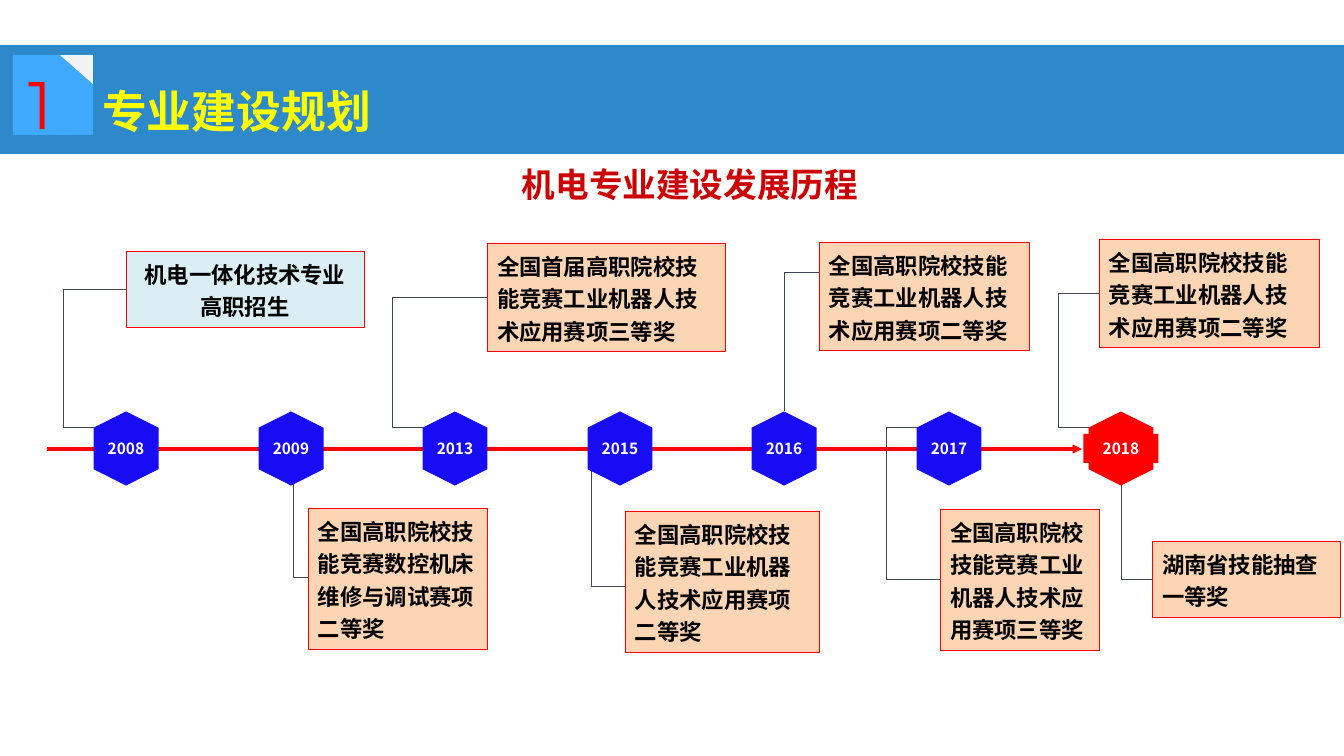
from pptx import Presentation
from pptx import util as u
from pptx.dml import color
from pptx.enum import shapes, text
from pptx.oxml import xmlchemy as x
from lxml import etree

A = "{http://schemas.openxmlformats.org/drawingml/2006/main}"
CJK = "Noto Sans CJK SC"
SHAPE, ALIGN = shapes.MSO_SHAPE, text.PP_ALIGN


def px(n):
    return u.Emu(round(n * 914400 / 100.8))


def rgb(c):
    return color.RGBColor.from_string(c)


prs = Presentation()
prs.slide_width, prs.slide_height = px(1344), px(756)
s = prs.slides.add_slide(prs.slide_layouts[5])

# Header band with its title in front
band = s.shapes.add_shape(SHAPE.RECTANGLE, px(0), px(45), px(1344), px(109))
title = s.shapes.title
title.left, title.top, title.width, title.height = px(94), px(46), px(350), px(95)
title.element.addprevious(band.element)
plain = [(band, "0070C0")]
texts = [(title, "专业建设规划", dict(size=32, color="FFFF00", spacing=1.6, inset=8))]

# Heading
heading = s.shapes.add_textbox(px(513), px(159), px(379), px(64))
texts.append((heading, "机电专业建设发展历程", dict(size=24, color="CC0000", inset=9)))

# Time axis
axis = s.shapes.add_connector(shapes.MSO_CONNECTOR.STRAIGHT, px(47), px(449), px(1082), px(449))
lines = [(axis, "FF0000", 2.25)]

# Milestone boxes: text, (left, top, width, height),
# then the elbow: height at the box, x of the bend, end at the hexagon
contest = "全国高职院校技能竞赛工业机器人技术应用赛项"
milestones = [
    ("机电一体化技术专业高职招生", (126, 251, 238, 76), 289, 63, (94, 427)),
    ("全国高职院校技能竞赛数控机床维修与调试赛项二等奖", (308, 508, 179, 141), 577, 293, (257, 447)),
    ("全国首届高职院校技能竞赛工业机器人技术应用赛项三等奖", (487, 243, 238, 108), 297, 392, (423, 427)),
    (contest + "二等奖", (625, 511, 194, 141), 586, 591, (591, 430)),
    (contest + "二等奖", (819, 242, 210, 108), 272, 784, (784, 411)),
    (contest + "三等奖", (940, 509, 159, 141), 579, 886, (917, 427)),
    (contest + "二等奖", (1099, 239, 220, 108), 293, 1058, (1089, 427)),
    ("湖南省技能抽查一等奖", (1152, 541, 188, 76), 579, 1121, (1121, 483)),
]

for words, place, y, bend, (end_x, end_y) in milestones:
    start_x = place[0]
    elbow = s.shapes.add_connector(
        shapes.MSO_CONNECTOR.ELBOW, px(start_x), px(y), px(end_x), px(end_y))
    adj = round(100000 * (bend - start_x) / (end_x - start_x))
    geom = elbow.element.spPr.find(A + "prstGeom")
    etree.SubElement(geom.find(A + "avLst"), A + "gd", name="adj1", fmla=f"val {adj}")
    lines.append((elbow, "414455", 0.5))

for i, (words, place, *_) in enumerate(milestones):
    box = s.shapes.add_shape(SHAPE.RECTANGLE, *map(px, place))
    plain.append((box, "FCD5B5" if i else "DBEEF4"))
    texts.append((box, words, dict(spacing=1.2, align=ALIGN.LEFT if i else ALIGN.CENTER)))

# Year hexagons with their labels
years = [2008, 2009, 2013, 2015, 2016, 2017, 2018]
for i, year in enumerate(years):
    last = year == years[-1]
    fill = "FF0000" if last else "170CF4"
    centre = 1121 if last else 126 + round(164.6 * i)
    width = 75 if last else 63
    hexagon = s.shapes.add_shape(SHAPE.HEXAGON, px(centre - 37), px(416), px(74), px(65))
    hexagon.rotation = 90
    label = s.shapes.add_shape(
        SHAPE.RECTANGLE, px(centre - width / 2), px(434), px(width), px(29))
    plain += [(hexagon, fill), (label, fill)]
    texts.append((label, str(year), dict(size=11, color="FFFFFF", align=ALIGN.CENTER)))

# Section number on a folded sheet
sheet = s.shapes.add_shape(SHAPE.RECTANGLE, px(13), px(55), px(80), px(80))
fold = s.shapes.add_shape(SHAPE.RIGHT_TRIANGLE, px(60), px(55), px(33), px(29))
fold.rotation = 180
number = s.shapes.add_textbox(px(28), px(62), px(64), px(81))
plain += [(sheet, "3FA9FD"), (fold, "F2F2F2")]
texts.append((number, "1", dict(size=48, color="FF0000", font="Montserrat", bold=False,
                                inset=0, inset_y=0)))

# Fills and outlines
boxed = ("FCD5B5", "DBEEF4")
for sp, fill in plain:
    sp.shadow.inherit = False
    sp.fill.solid()
    sp.fill.fore_color.rgb = rgb(fill)
    if fill in boxed:
        sp.line.color.rgb = rgb("FF0000")
        sp.line.width = u.Pt(0.5)
    else:
        sp.line.fill.background()
band_color = band.element.spPr.find(f"{A}solidFill/{A}srgbClr")
etree.SubElement(band_color, A + "alpha", val="82000")

# Line styles and the arrowhead
for line, c, width in lines:
    line.line.color.rgb = rgb(c)
    line.line.width = u.Pt(width)
    etree.SubElement(line.element.spPr, A + "effectLst")
etree.SubElement(axis.element.spPr.find(A + "ln"), A + "tailEnd", type="triangle")

# Text styles
base = dict(size=16, color="000000", font=CJK, bold=True, spacing=1.0,
            align=ALIGN.LEFT, inset=10, inset_y=5)
for sp, words, changes in texts:
    style = base | changes
    tf = sp.text_frame
    frame = dict(word_wrap=True, auto_size=text.MSO_AUTO_SIZE.NONE,
                 vertical_anchor=text.MSO_ANCHOR.TOP,
                 margin_left=px(style["inset"]), margin_right=px(style["inset"]),
                 margin_top=px(style["inset_y"]), margin_bottom=px(style["inset_y"]))
    for name, value in frame.items():
        setattr(tf, name, value)
    p = tf.paragraphs[0]
    p.alignment, p.line_spacing = style["align"], style["spacing"]
    r = p.add_run()
    r.text = words
    for name, value in dict(size=u.Pt(style["size"]), bold=style["bold"], name=style["font"]).items():
        setattr(r.font, name, value)
    r.font.color.rgb = rgb(style["color"])
    etree.SubElement(r.font._element, A + "ea", typeface=style["font"])

prs.save("out.pptx")
